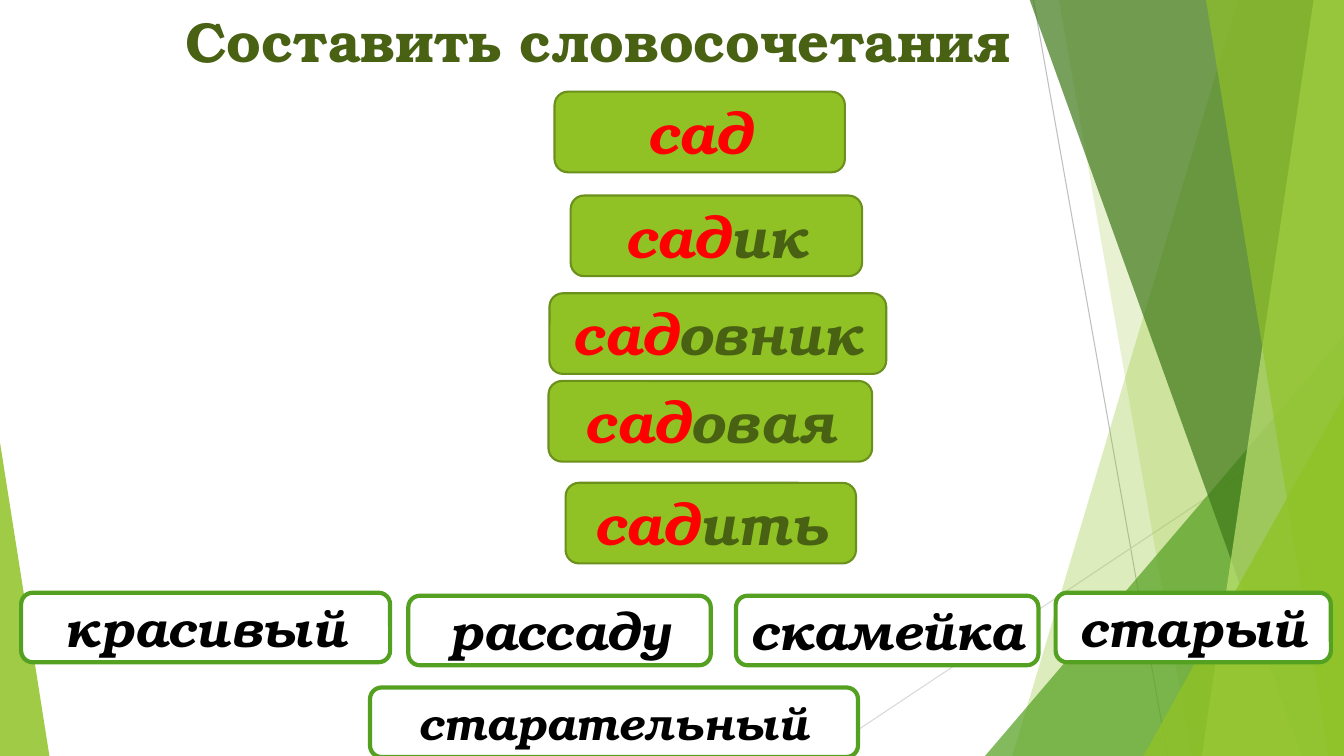
import pptx
import pptx.util
import pptx.dml.color
import pptx.enum.shapes
import pptx.enum.text
import pptx.oxml.ns
import lxml.etree

Inches = pptx.util.Inches
Pt = pptx.util.Pt
RGBColor = pptx.dml.color.RGBColor
SHAPE = pptx.enum.shapes.MSO_SHAPE
ANCHOR = pptx.enum.text.MSO_ANCHOR
ALIGN = pptx.enum.text.PP_ALIGN
qn = pptx.oxml.ns.qn

WHITE = RGBColor(0xFF, 0xFF, 0xFF)
BLACK = RGBColor(0, 0, 0)
RED = RGBColor(0xFF, 0, 0)
LIME = RGBColor(0x90, 0xC2, 0x26)
PALE = RGBColor(0xC0, 0xE4, 0x74)
GREEN = RGBColor(0x54, 0xA0, 0x21)
DARK = RGBColor(0x3F, 0x78, 0x19)
OLIVE = RGBColor(0x48, 0x61, 0x13)
EDGE = RGBColor(0x6B, 0x90, 0x1C)
GRAY = RGBColor(0xBF, 0xBF, 0xBF)
SILVER = RGBColor(0xD9, 0xD9, 0xD9)

WIDE, HIGH = 13.33, 7.5
FONT = {"name": "TeX Gyre Bonum", "bold": True}
ROOT = "сад"

# start, end, colour
LINES = [
    ((10.25, 0), (11.58, HIGH), GRAY),
    ((WIDE, 4.03), (8.12, HIGH), SILVER),
]
# top x, bottom x, colour, opacity; each band runs to the right edge
BACK_BANDS = [(12.28, 10.04, LIME, 30), (10.5, 11.82, LIME, 20)]
FRONT_BANDS = [
    (10.21, 12.91, DARK, 70),
    (13.03, 11.92, PALE, 70),
    (11.96, 13.18, LIME, 65),
]
# ending, left, top, width
FAMILY = [
    ("", 5.5, 0.91, 2.88),
    ("ик", 5.66, 1.94, 2.89),
    ("овая", 5.44, 3.78, 3.21),
    ("овник", 5.45, 2.91, 3.34),
    ("ить", 5.61, 4.79, 2.88),
]
# word, left, top, width, text size
CHOICES = [
    ("старый", 10.47, 5.88, 2.73, 36),
    ("старательный", 3.67, 6.82, 4.84, 32),
    ("скамейка", 7.3, 5.91, 3, 36),
    ("рассаду", 4.05, 5.91, 3, 36),
    ("красивый", 0.21, 5.88, 3.66, 36),
]


def tint(shape, color, alpha):
    """Fill a shape with a see-through colour and no outline."""
    shape.shadow.inherit = False
    shape.line.fill.background()
    shape.fill.solid()
    shape.fill.fore_color.rgb = color
    node = shape.fill._xPr.find(".//" + qn("a:srgbClr"))
    lxml.etree.SubElement(node, qn("a:alpha"), val=str(alpha * 1000))


def add_line(slide, start, end, color):
    kind = pptx.enum.shapes.MSO_CONNECTOR.STRAIGHT
    line = slide.shapes.add_connector(kind, *map(Inches, start + end))
    line.line.color.rgb = color
    line.line.width = Pt(0.75)
    lxml.etree.SubElement(line._element.spPr, qn("a:effectLst"))


def add_band(slide, top, base, color, alpha):
    pen = slide.shapes.build_freeform(Inches(top), Inches(-0.01))
    rest = [(WIDE, -0.01), (WIDE, HIGH), (base, HIGH)]
    pen.add_line_segments([(Inches(x), Inches(y)) for x, y in rest])
    tint(pen.convert_to_shape(), color, alpha)


def add_wedge(slide, left, width, height, tip, color, alpha):
    """Add a triangle on the bottom edge; tip is 0 for left, 1 for right."""
    box = map(Inches, (left, HIGH - height, width, height))
    wedge = slide.shapes.add_shape(SHAPE.ISOSCELES_TRIANGLE, *box)
    wedge.adjustments[0] = tip
    tint(wedge, color, alpha)


def add_run(para, text, size, color, **extra):
    run = para.add_run()
    run.text = text
    for key, value in {**FONT, "size": Pt(size), **extra}.items():
        setattr(run.font, key, value)
    run.font.color.rgb = color


def add_card(slide, box, fill, edge, weight, parts, size):
    """Add a rounded card; parts are pairs of text and colour."""
    card = slide.shapes.add_shape(SHAPE.ROUNDED_RECTANGLE, *map(Inches, box))
    card.shadow.inherit = False
    card.fill.solid()
    card.fill.fore_color.rgb = fill
    card.line.color.rgb = edge
    card.line.width = Pt(weight)
    frame = card.text_frame
    frame.word_wrap = False
    frame.vertical_anchor = ANCHOR.MIDDLE
    para = frame.paragraphs[0]
    para.alignment = ALIGN.CENTER
    for text, color in parts:
        add_run(para, text, size, color, italic=True)


def add_title(slide, text):
    box = slide.shapes.add_textbox(*map(Inches, (1.74, 0.02, 9.4, 1.44)))
    box.text_frame.word_wrap = True
    add_run(box.text_frame.paragraphs[0], text, 40, OLIVE)


def add_decor(slide):
    for line in LINES:
        add_line(slide, *line)
    for band in BACK_BANDS:
        add_band(slide, *band)
    add_wedge(slide, 9.77, 3.56, 4.17, 1, GREEN, 72)
    for band in FRONT_BANDS:
        add_band(slide, *band)
    add_wedge(slide, 11.34, 1.99, 3.57, 1, LIME, 80)
    add_wedge(slide, 0, 0.49, 3.11, 0, LIME, 85)


def main():
    deck = pptx.Presentation()
    deck.slide_width, deck.slide_height = Inches(WIDE), Inches(HIGH)
    slide = deck.slides.add_slide(deck.slide_layouts[6])
    add_decor(slide)
    add_title(slide, "Составить словосочетания")
    for ending, left, top, width in FAMILY:
        parts = [(ROOT, RED)] + ([(ending, OLIVE)] if ending else [])
        add_card(slide, (left, top, width, 0.8), LIME, EDGE, 1.5, parts, 40)
    for word, left, top, width, size in CHOICES:
        box = (left, top, width, 0.69)
        add_card(slide, box, WHITE, GREEN, 3, [(word, BLACK)], size)
    deck.save("out.pptx")


if __name__ == "__main__":
    main()
